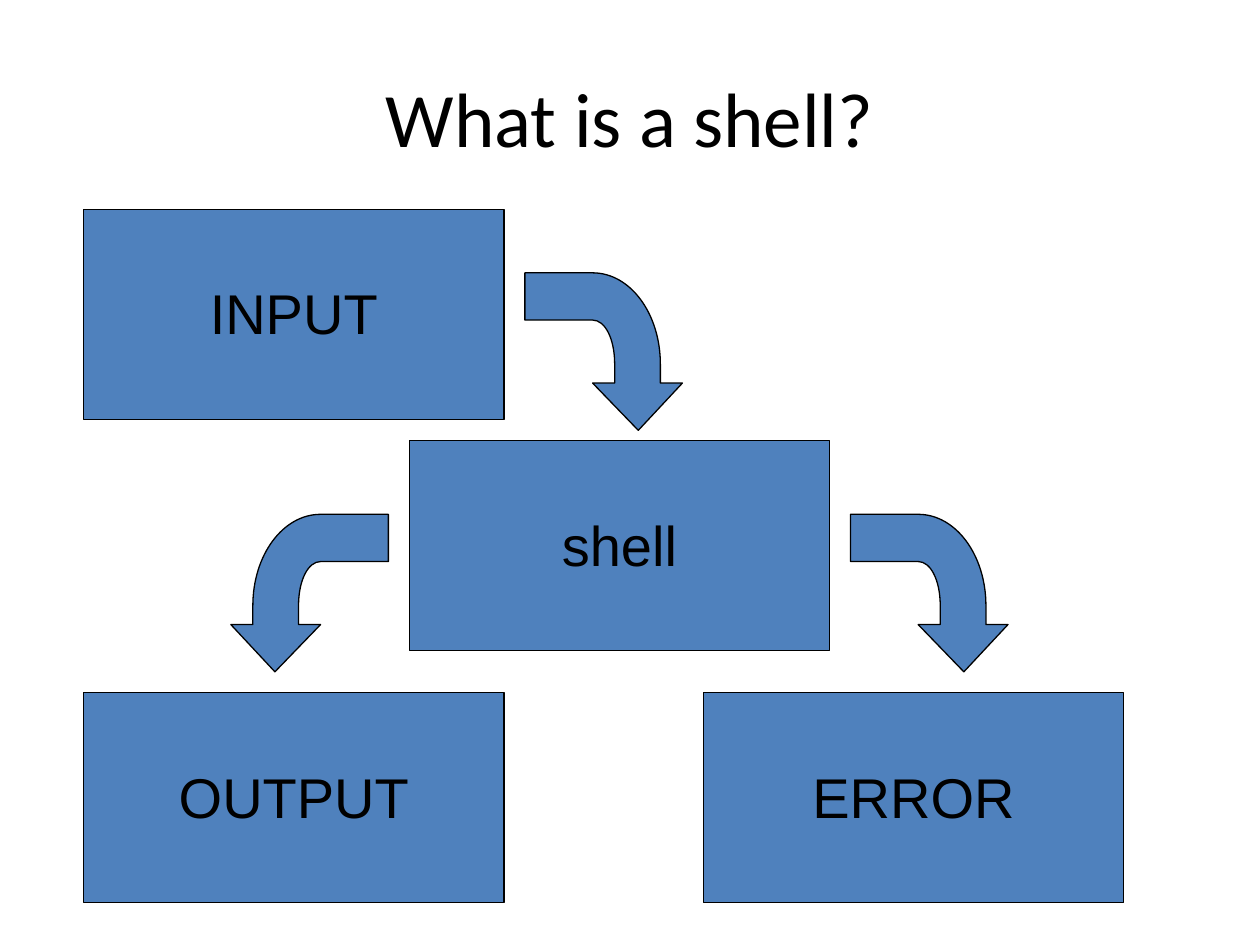
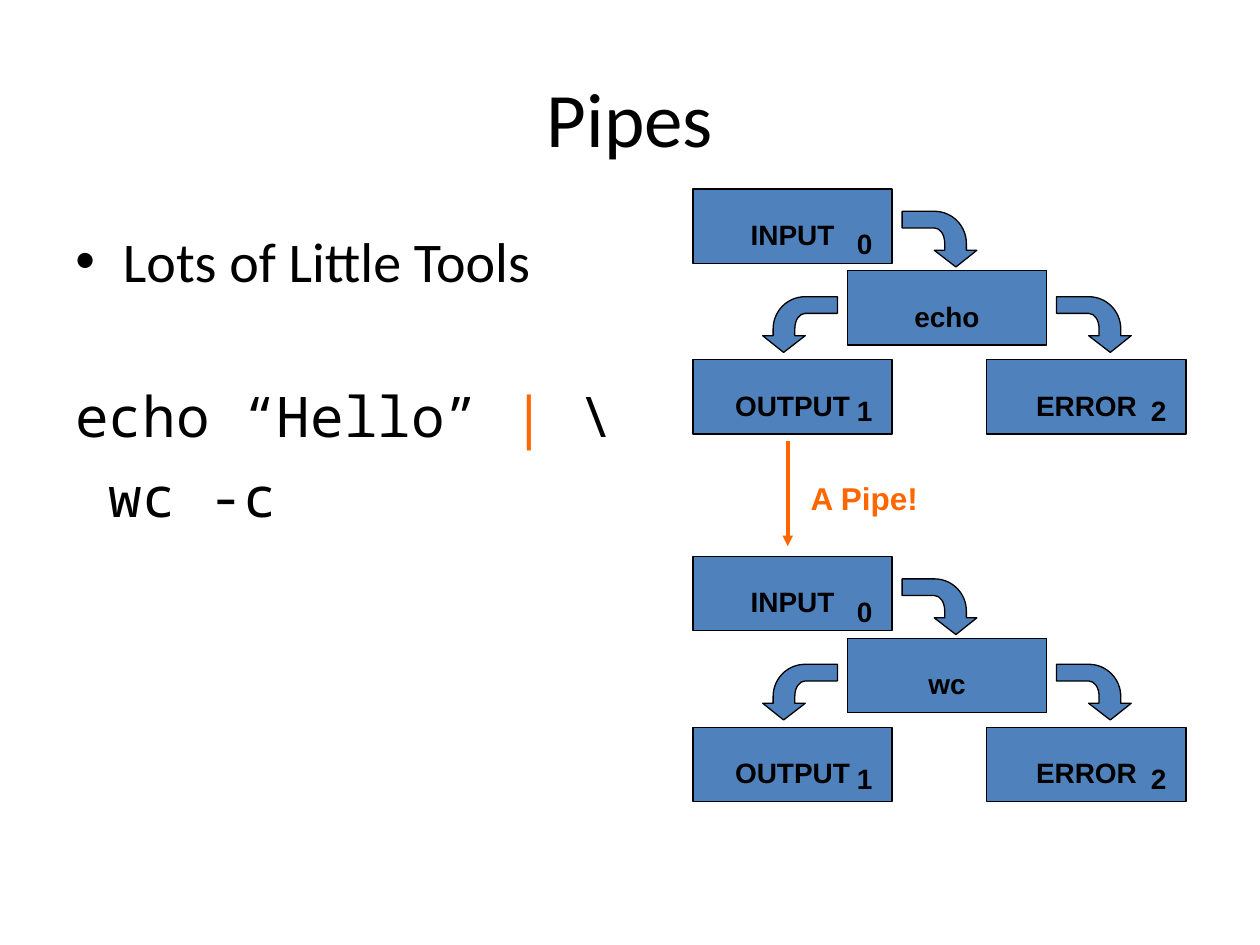
from lxml.etree import SubElement
from pptx import Presentation
from pptx.dml.color import RGBColor
from pptx.enum.shapes import MSO_CONNECTOR, MSO_SHAPE
from pptx.enum.text import MSO_ANCHOR, PP_ALIGN
from pptx.oxml.ns import qn
from pptx.util import Cm, Pt

COLORS = {"ink": "000000", "box": "4F81BD", "pipe": "FF6600"}
COLS, ROWS = 99, 66
BOX_W, BOX_H, TURN = 40, 20, 15
SPOTS = [(0, 0), (31, 22), (0, 46), (59, 46)]
TURNS = [(42, 6, False), (73, 29, False), (14, 29, True)]
DIGITS = [("0", 29.4, 8.5), ("1", 29.4, 53.5), ("2", 88.4, 53.5)]
HEAD = [(0.72, 1), (1, 0.7), (0.86, 0.7), (0.86, 0.58)]
OUTER = [(0.86, 0.26), (0.67, 0), (0.43, 0)]
STEM = [(0, 0), (0, 0.3), (0.43, 0.3)]
INNER = [(0.51, 0.3), (0.57, 0.42), (0.57, 0.58)]
NECK = [(0.57, 0.7), (0.43, 0.7)]


def color(name):
    return RGBColor.from_string(COLORS[name])


def add_run(para, text, size, font, ink="ink", bold=False):
    run = para.add_run()
    run.text = text
    run.font.size = Pt(size)
    run.font.name = font
    run.font.bold = bold
    run.font.color.rgb = color(ink)


def add_frame(shapes, left, top, width, height):
    frame = shapes.add_textbox(Cm(left), Cm(top), Cm(width), Cm(height)).text_frame
    frame.word_wrap = True
    return frame


def add_label(shapes, text, left, top, width, size, ink="ink", bold=True, align=PP_ALIGN.CENTER):
    frame = add_frame(shapes, left, top, width, 0.3 + size * 0.04)
    para = frame.paragraphs[0]
    para.alignment = align
    add_run(para, text, size, "Arial", ink, bold)


def add_title(slide, text):
    frame = add_frame(slide.shapes, 1.27, 0.76, 22.86, 3.18)
    frame.vertical_anchor = MSO_ANCHOR.MIDDLE
    para = frame.paragraphs[0]
    para.alignment = PP_ALIGN.CENTER
    add_run(para, text, 44, "Calibri")


def paint(shape):
    shape.shadow.inherit = False
    shape.fill.solid()
    shape.fill.fore_color.rgb = color("box")
    shape.line.color.rgb = color("ink")
    shape.line.width = Pt(0.75)


def bend(lines):
    curve = lines[0]
    curve.tag = qn("a:cubicBezTo")
    for line in lines[1:]:
        curve.append(line[0])
        line.getparent().remove(line)


def add_turn(shapes, left, top, width, height, flip):
    points = [
        (Cm(left + width * (1 - x if flip else x)), Cm(top + height * y))
        for x, y in HEAD + OUTER + STEM + INNER + NECK
    ]
    maker = shapes.build_freeform(*points[0])
    maker.add_line_segments(points[1:], close=True)
    shape = maker.convert_to_shape()
    lines = list(shape._element.iter(qn("a:lnTo")))
    for first in (3, 9):
        bend(lines[first:first + 3])
    paint(shape)


def add_flow(slide, tool, left, top, width, height, size, bold=False, digits=()):
    shapes = slide.shapes.add_group_shape().shapes
    dx, dy = width / COLS, height / ROWS
    for text, (col, row) in zip(("INPUT", tool, "OUTPUT", "ERROR"), SPOTS):
        x, y = left + col * dx, top + row * dy
        paint(shapes.add_shape(MSO_SHAPE.RECTANGLE, Cm(x), Cm(y), Cm(BOX_W * dx), Cm(BOX_H * dy)))
        add_label(shapes, text, x, y + 6 * dy, BOX_W * dx, size, bold=bold)
    for col, row, flip in TURNS:
        add_turn(shapes, left + col * dx, top + row * dy, TURN * dx, TURN * dy, flip)
    for text, col, row in digits:
        add_label(shapes, text, left + col * dx, top + row * dy, 1.02, size)


def add_pipe(slide, left, top, length):
    shapes = slide.shapes.add_group_shape().shapes
    line = shapes.add_connector(
        MSO_CONNECTOR.STRAIGHT, Cm(left), Cm(top), Cm(left), Cm(top + length)
    )
    line.line.color.rgb = color("pipe")
    line.line.width = Pt(2)
    SubElement(line.line._get_or_add_ln(), qn("a:tailEnd"), type="triangle")
    SubElement(line._element.spPr, qn("a:effectLst"))
    add_label(shapes, "A Pipe!", left + 0.21, top + 0.64, 7.2, 18, "pipe", align=PP_ALIGN.LEFT)


def add_body(slide, left, top, width, height):
    frame = add_frame(slide.shapes, left, top, width, height)
    mono = "Noto Sans Mono"
    lines = [
        (0, [("Lots of Little Tools", "Calibri", "ink")]),
        (50, [("echo “Hello” ", mono, "ink"), ("|", mono, "pipe"), (" \\", mono, "ink")]),
        (7, [(" wc -c", mono, "ink")]),
    ]
    for index, (gap, runs) in enumerate(lines):
        para = frame.add_paragraph() if index else frame.paragraphs[0]
        para.space_before = Pt(gap)
        props = para._p.get_or_add_pPr()
        props.set("marL", str(Cm(0.96)))
        props.set("indent", str(-Cm(0.96)))
        if not index:
            SubElement(props, qn("a:buFont"), typeface="Arial")
            SubElement(props, qn("a:buChar"), char="•")
        for text, font, ink in runs:
            add_run(para, text, 32, font, ink)


def shell_slide(slide):
    add_title(slide, "What is a shell?")
    add_flow(slide, "shell", 1.69, 4.23, 20.96, 13.97, 32)


def pipes_slide(slide):
    add_title(slide, "Pipes")
    add_body(slide, 1.27, 4.45, 22.86, 12.57)
    for tool, top in (("echo", 3.81), ("wc", 11.22)):
        add_flow(slide, tool, 13.97, top, 9.94, 4.94, 16, True, DIGITS)
    add_pipe(slide, 15.88, 8.89, 2.12)


def main():
    deck = Presentation()
    deck.slide_width, deck.slide_height = Cm(25.4), Cm(19.05)
    for build in (shell_slide, pipes_slide):
        build(deck.slides.add_slide(deck.slide_layouts[6]))
    deck.save("out.pptx")


if __name__ == "__main__":
    main()
